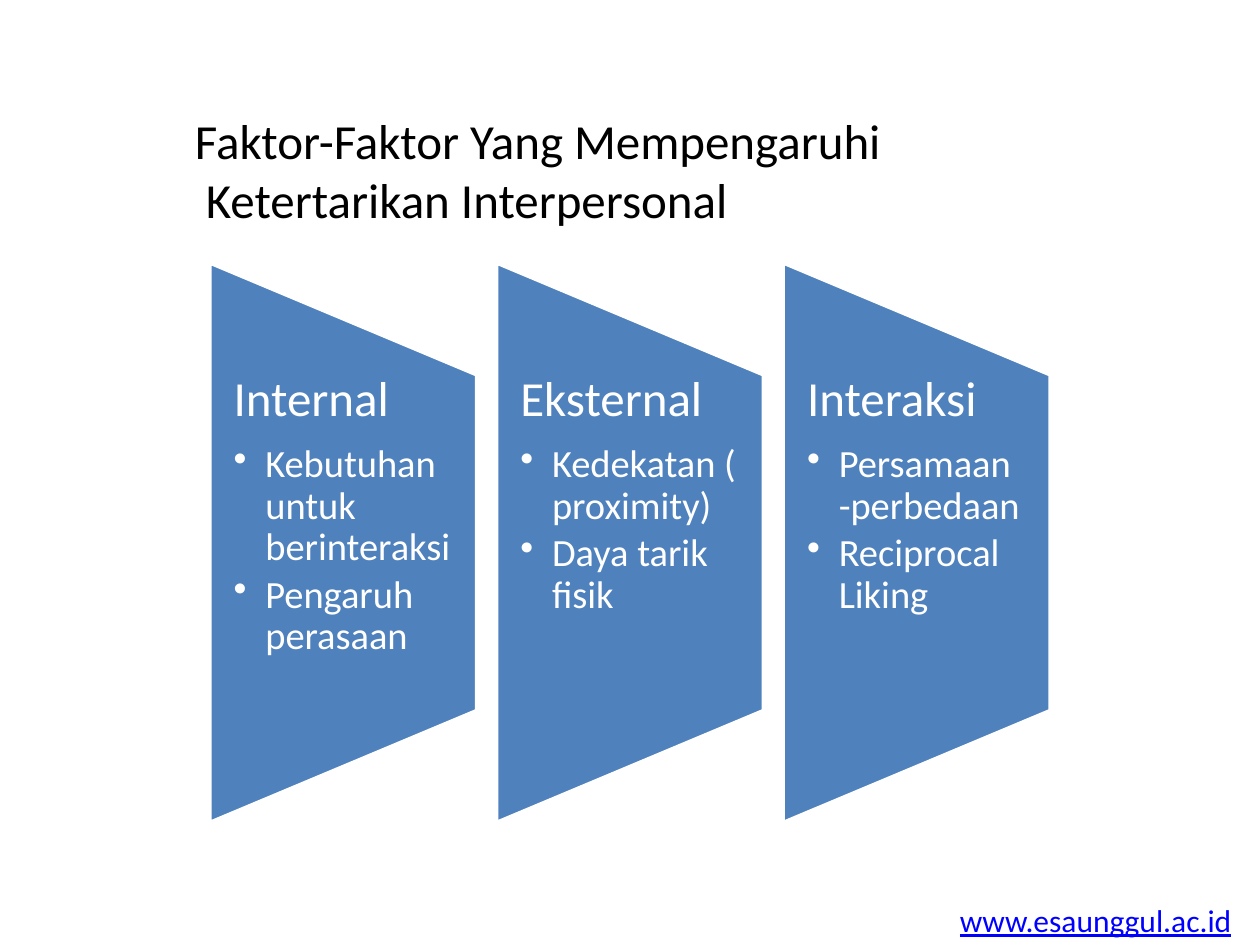
from lxml import etree
from pptx import Presentation
from pptx.dml.color import RGBColor
from pptx.enum import shapes, text
from pptx.oxml import ns
from pptx.util import Cm, Pt

COLOURS = {"panel": "4F81BD", "white": "FFFFFF", "black": "000000", "link": "0000FF"}
FACTORS = [
    ("Internal", ["Kebutuhan untuk berinteraksi", "Pengaruh perasaan"]),
    ("Eksternal", ["Kedekatan ( proximity)", "Daya tarik fisik"]),
    ("Interaksi", ["Persamaan -perbedaan", "Reciprocal Liking"]),
]
PANEL_WIDTH, PANEL_HEIGHT, PANEL_PITCH = 5.38, 11.28, 5.78
TEXT_HEIGHT = 6.78
FIRST_CENTRE, MIDDLE = 6.92, 10.94


def colour(name):
    return RGBColor.from_string(COLOURS[name])


def write(frame, words, size, ink, first=False, underline=None,
          line=None, after=None, bullet=False):
    para = frame.paragraphs[0] if first else frame.add_paragraph()
    para.alignment = text.PP_ALIGN.LEFT
    if line:
        para.line_spacing = line
    if after:
        para.space_after = Pt(after)
    if bullet:
        properties = para._p.get_or_add_pPr()
        properties.set("marL", str(Cm(0.64)))
        properties.set("indent", str(-Cm(0.64)))
        etree.SubElement(properties, ns.qn("a:buChar")).set("char", "•")
    span = para.add_run()
    span.text = words
    span.font.name = "Calibri"
    span.font.size = Pt(size)
    span.font.color.rgb = colour(ink)
    span.font.underline = underline


class FactorPage:
    def __init__(self, deck):
        self.page = deck.slides.add_slide(deck.slide_layouts[6])

    def text_box(self, left, top, width, height, wrap=False, margins=None):
        box = self.page.shapes.add_textbox(Cm(left), Cm(top), Cm(width), Cm(height))
        frame = box.text_frame
        frame.word_wrap = wrap
        if margins:
            frame.margin_left, frame.margin_right = (Cm(side) for side in margins)
            frame.margin_top = frame.margin_bottom = 0
        return frame

    def panel(self, centre):
        shape = self.page.shapes.add_shape(
            shapes.MSO_SHAPE.FLOWCHART_MANUAL_OPERATION,
            Cm(centre - PANEL_HEIGHT / 2), Cm(MIDDLE - PANEL_WIDTH / 2),
            Cm(PANEL_HEIGHT), Cm(PANEL_WIDTH))
        shape.rotation = 270
        shape.shadow.inherit = False
        shape.fill.solid()
        shape.fill.fore_color.rgb = colour("panel")
        shape.line.color.rgb = colour("white")
        shape.line.width = Pt(2)

    def factor(self, centre, heading, points):
        self.panel(centre)
        frame = self.text_box(centre - PANEL_WIDTH / 2, MIDDLE - TEXT_HEIGHT / 2,
                              PANEL_WIDTH, TEXT_HEIGHT, wrap=True, margins=(0.48, 0.5))
        write(frame, heading, 28, "white", first=True, line=0.9, after=9.8)
        for point in points:
            write(frame, point, 22, "white", line=0.9, after=3.3, bullet=True)


def main():
    deck = Presentation()
    deck.slide_width, deck.slide_height = Cm(25.4), Cm(19.05)
    page = FactorPage(deck)
    address = page.text_box(19.1, 18.03, 6.05, 1.02)
    write(address, "www.esaunggul.ac.id", 18, "link", first=True, underline=True)
    title = page.text_box(3.68, 2.11, 14.73, 2.64)
    write(title, "Faktor-Faktor Yang Mempengaruhi", 28, "black", first=True)
    write(title, " Ketertarikan Interpersonal", 28, "black")
    for index, (heading, points) in enumerate(FACTORS):
        page.factor(FIRST_CENTRE + index * PANEL_PITCH, heading, points)
    deck.save("out.pptx")


if __name__ == "__main__":
    main()
